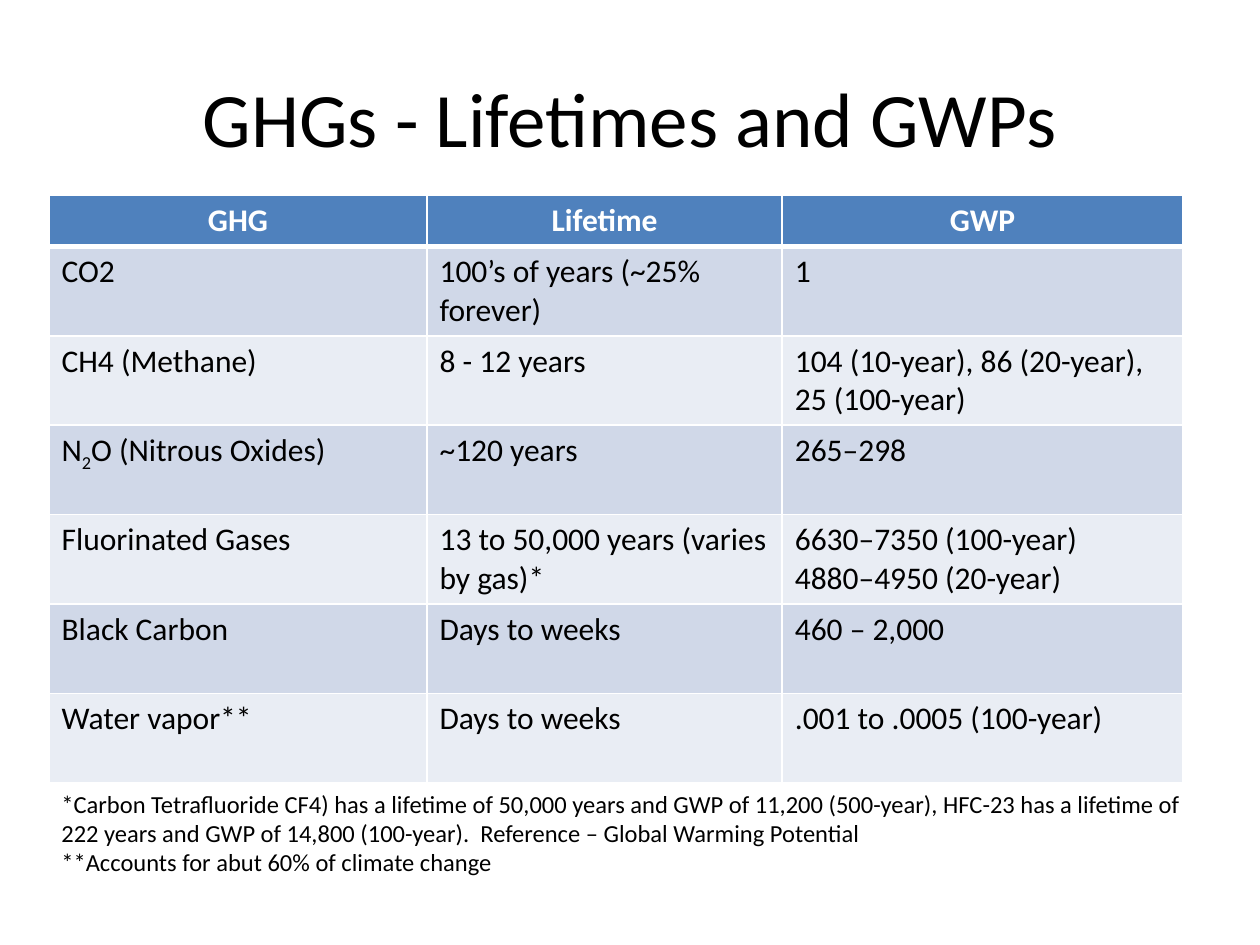
from dataclasses import dataclass

from lxml import etree
from pptx import Presentation
from pptx.dml.color import RGBColor
from pptx.enum.text import MSO_ANCHOR, PP_ALIGN
from pptx.oxml.ns import qn
from pptx.util import Pt

LEFT, CENTER = PP_ALIGN.LEFT, PP_ALIGN.CENTER
TOP, MIDDLE = MSO_ANCHOR.TOP, MSO_ANCHOR.MIDDLE


@dataclass(frozen=True)
class Theme:
    font: str = "Calibri"
    ink: str = "000000"
    paper: str = "FFFFFF"
    header: str = "4F81BD"
    bands: tuple = ("D0D8E8", "E9EDF4")
    title_size: int = 44
    table_size: int = 18
    note_size: int = 14
    thin: int = 1
    thick: int = 3


HEADINGS = ("GHG", "Lifetime", "GWP")
GASES = (
    ("CO2", "100’s of years (~25% forever)", "1"),
    ("CH4 (Methane)", "8 - 12 years", "104 (10-year), 86 (20-year), 25 (100-year)"),
    ("N_2_O (Nitrous Oxides)", "~120 years", "265–298"),
    ("Fluorinated Gases", "13 to 50,000 years (varies by gas)*",
     "6630–7350 (100-year)\n4880–4950 (20-year)"),
    ("Black Carbon", "Days to weeks", "460 – 2,000"),
    ("Water vapor**", "Days to weeks", ".001 to .0005 (100-year)"),
)
FOOTNOTES = (
    "*Carbon Tetrafluoride CF4) has a lifetime of 50,000 years and GWP of 11,200 (500-year), "
    "HFC-23 has a lifetime of 222 years and GWP of 14,800 (100-year).  "
    "Reference – Global Warming Potential\n"
    "**Accounts for abut 60% of climate change"
)


def write(frame, text, *, font, size, color, bold=False, align=LEFT):
    """Fill a text frame: newlines part paragraphs, underscores enclose subscripts."""
    for number, line in enumerate(text.split("\n")):
        para = frame.add_paragraph() if number else frame.paragraphs[0]
        para.alignment = align
        for index, part in enumerate(line.split("_")):
            span = para.add_run()
            span.text = part
            span.font.name = font
            span.font.size = Pt(size)
            span.font.bold = bold
            span.font.color.rgb = RGBColor.from_string(color)
            if index % 2:
                span.font._element.set("baseline", "-25000")


def set_borders(cell, color, **widths):
    """Draw cell borders; widths are in points, keyed by L, R, T and B in that order."""
    properties = cell._tc.get_or_add_tcPr()
    for index, (side, width) in enumerate(widths.items()):
        line = etree.Element(qn(f"a:ln{side}"), w=str(Pt(width)))
        fill = etree.SubElement(line, qn("a:solidFill"))
        etree.SubElement(fill, qn("a:srgbClr"), val=color)
        properties.insert(index, line)


class SlideBuilder:
    def __init__(self, slide, theme):
        self.slide = slide
        self.theme = theme

    def text(self, left, top, width, height, text, *, size, align=LEFT, anchor=TOP):
        box = self.slide.shapes.add_textbox(Pt(left), Pt(top), Pt(width), Pt(height))
        frame = box.text_frame
        frame.word_wrap = True
        frame.vertical_anchor = anchor
        write(frame, text, font=self.theme.font, size=size, color=self.theme.ink, align=align)

    def table(self, left, top, widths, header_height, row_height, headings, rows):
        heights = [header_height] + [row_height] * len(rows)
        table = self.slide.shapes.add_table(
            len(heights), len(widths), Pt(left), Pt(top), Pt(sum(widths)), Pt(sum(heights))
        ).table
        for column, width in zip(table.columns, widths):
            column.width = Pt(width)
        for row, height in zip(table.rows, heights):
            row.height = Pt(height)
        for row_index, texts in enumerate((headings, *rows)):
            for column_index, text in enumerate(texts):
                self.cell(table.cell(row_index, column_index), text, row_index)

    def cell(self, cell, text, row_index):
        theme = self.theme
        is_header = row_index == 0
        fill = theme.header if is_header else theme.bands[(row_index - 1) % 2]
        cell.fill.solid()
        cell.fill.fore_color.rgb = RGBColor.from_string(fill)
        set_borders(
            cell, theme.paper, L=theme.thin, R=theme.thin,
            T=theme.thick if row_index == 1 else theme.thin,
            B=theme.thick if is_header else theme.thin,
        )
        write(cell.text_frame, text, font=theme.font, size=theme.table_size, bold=is_header,
              color=theme.paper if is_header else theme.ink,
              align=CENTER if is_header else LEFT)


def main():
    deck = Presentation()
    deck.slide_width, deck.slide_height = Pt(720), Pt(540)
    theme = Theme()
    page = SlideBuilder(deck.slides.add_slide(deck.slide_layouts[6]), theme)
    page.text(36, 21.6, 648, 90, "GHGs - Lifetimes and GWPs",
              size=theme.title_size, align=CENTER, anchor=MIDDLE)
    page.table(28, 111.6, (216, 203, 229), 29.2, 51.1, HEADINGS, GASES)
    page.text(28, 447.1, 678, 58.3, FOOTNOTES, size=theme.note_size)
    deck.save("out.pptx")


if __name__ == "__main__":
    main()
